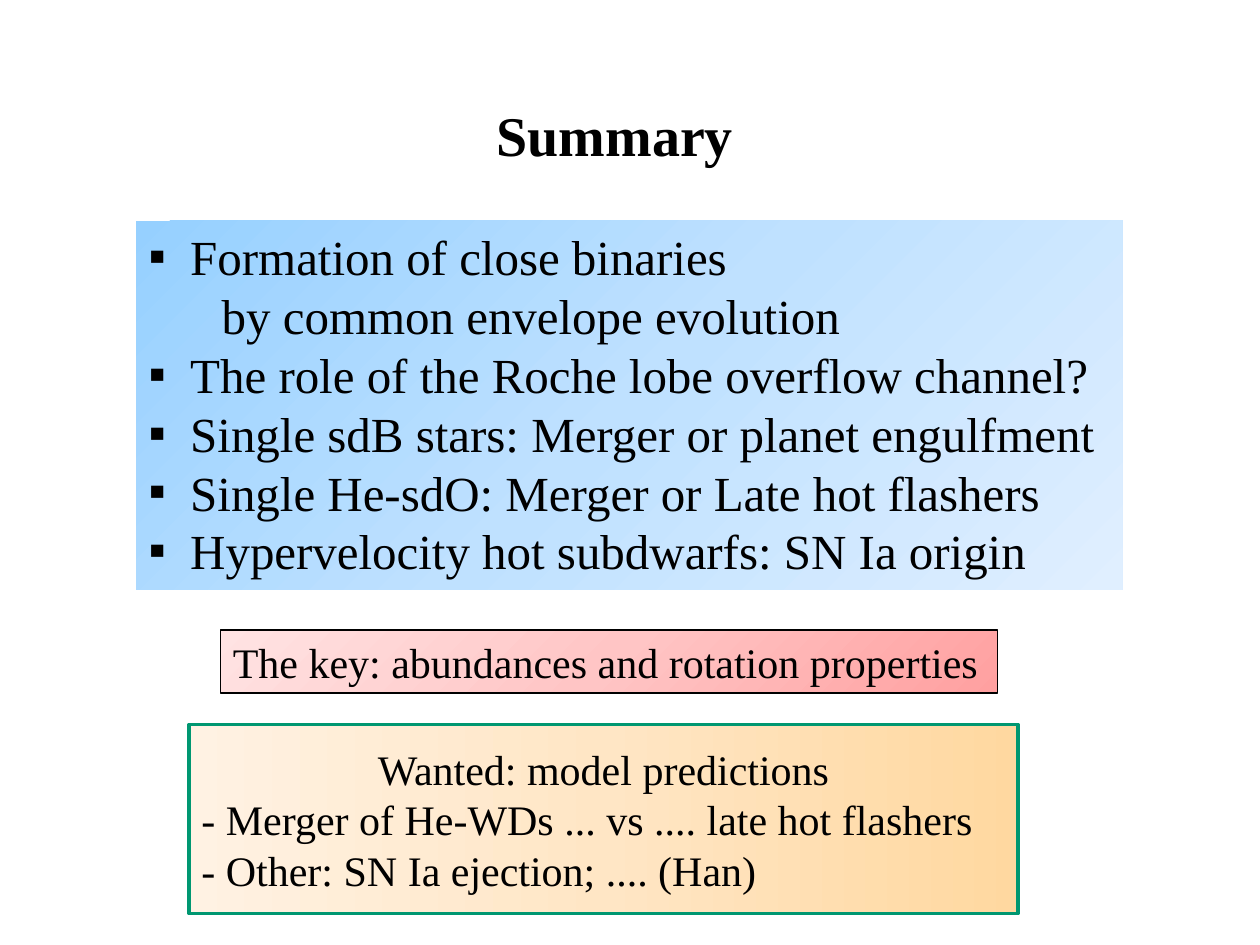
from copy import deepcopy

from pptx import Presentation
from pptx.dml.color import RGBColor
from pptx.enum.shapes import MSO_SHAPE
from pptx.enum.text import MSO_ANCHOR, MSO_AUTO_SIZE, PP_ALIGN
from pptx.oxml.ns import qn
from pptx.util import Inches, Pt
from lxml import etree

COLORS = {
    "text": "000000",
    "green": "009771",
    "blue": ("96D0FF", "BFE1FF", "E0EFFF"),
    "red": ("FFA0A0", "FFC5C5", "FFE3E3"),
    "orange": ("FFD8A0", "FFE6C5", "FFF2E3"),
}


class SlideBuilder:
    font = "Times New Roman"

    def __init__(self, prs):
        self.s = prs.slides.add_slide(prs.slide_layouts[1])

    def place(self, sp, box):
        sp.left, sp.top, sp.width, sp.height = (Inches(v) for v in box)

    def gradient(self, sp, name, angle):
        """Three-stop gradient; angle runs clockwise."""
        sp.fill.gradient()
        sp.fill.gradient_angle = (360 - angle) % 360
        stops = sp._element.spPr.find(".//" + qn("a:gsLst"))
        middle = deepcopy(stops[0])
        middle.set("pos", "50000")
        stops.insert(1, middle)
        for stop, color in zip(sp.fill.gradient_stops, COLORS[name]):
            stop.color.rgb = RGBColor.from_string(color)

    def set_text(self, sp, lines, size, bold=False, wrap=True,
                 anchor=MSO_ANCHOR.TOP, align=PP_ALIGN.LEFT):
        tf = sp.text_frame
        tf.text = "\n".join(lines)
        tf.word_wrap = wrap
        tf.auto_size = MSO_AUTO_SIZE.NONE
        tf.vertical_anchor = anchor
        for p in tf.paragraphs:
            p.alignment = align
            p.space_before = Pt(0)
            for r in p.runs:
                r.font.name, r.font.size, r.font.bold = self.font, Pt(size), bold
                r.font.color.rgb = RGBColor.from_string(COLORS["text"])
        return tf.paragraphs

    def title(self, text, box):
        sp = self.s.shapes.title
        self.place(sp, box)
        self.set_text(sp, [text], 32, bold=True, wrap=False, align=PP_ALIGN.CENTER)

    def bullets(self, items, box, fill, angle):
        """Items are (text, has_bullet) pairs."""
        sp = self.s.placeholders[1]
        self.place(sp, box)
        self.gradient(sp, fill, angle)
        paragraphs = self.set_text(sp, [text for text, _ in items], 28, wrap=False)
        for p, (_, has_bullet) in zip(paragraphs, items):
            pPr = p._p.get_or_add_pPr()
            margin, indent = (0.33, -0.33) if has_bullet else (0.58, 0)
            pPr.set("marL", str(Inches(margin)))
            pPr.set("indent", str(Inches(indent)))
            if has_bullet:
                etree.SubElement(pPr, qn("a:buFont"), typeface=self.font)
                etree.SubElement(pPr, qn("a:buChar"), char="▪")
            else:
                etree.SubElement(pPr, qn("a:buNone"))

    def panel(self, kind, lines, box, fill, angle, line, width, **style):
        sp = self.s.shapes.add_shape(kind, *(Inches(v) for v in box))
        sp.shadow.inherit = False
        self.gradient(sp, fill, angle)
        sp.line.color.rgb = RGBColor.from_string(COLORS[line])
        sp.line.width = Pt(width)
        return self.set_text(sp, lines, 24, **style)


def main():
    prs = Presentation()
    prs.slide_width, prs.slide_height = Inches(10), Inches(7.5)
    b = SlideBuilder(prs)

    # Title and main findings
    b.title("Summary", (3.83, 0.75, 2.1, 0.64))
    b.bullets([
        ("Formation of close binaries", True),
        ("by common envelope evolution", False),
        ("The role of the Roche lobe overflow channel?", True),
        ("Single sdB stars: Merger or planet engulfment", True),
        ("Single He-sdO: Merger or Late hot flashers", True),
        ("Hypervelocity hot subdwarfs: SN Ia origin", True),
    ], (1.08, 1.75, 7.83, 2.93), "blue", 45)

    # Wanted predictions
    wanted = b.panel(MSO_SHAPE.FLOWCHART_PROCESS, [
        "Wanted: model predictions",
        "- Merger of He-WDs ... vs .... late hot flashers",
        "- Other: SN Ia ejection; .... (Han)",
    ], (1.5, 5.75, 6.58, 1.5), "orange", 180, "green", 2,
        anchor=MSO_ANCHOR.MIDDLE)
    wanted[0].alignment = PP_ALIGN.CENTER

    # Key message
    b.panel(MSO_SHAPE.RECTANGLE, ["The key: abundances and rotation properties"],
            (1.75, 5, 6.17, 0.5), "red", 225, "text", 0.75, wrap=False)

    prs.save("out.pptx")


if __name__ == "__main__":
    main()
